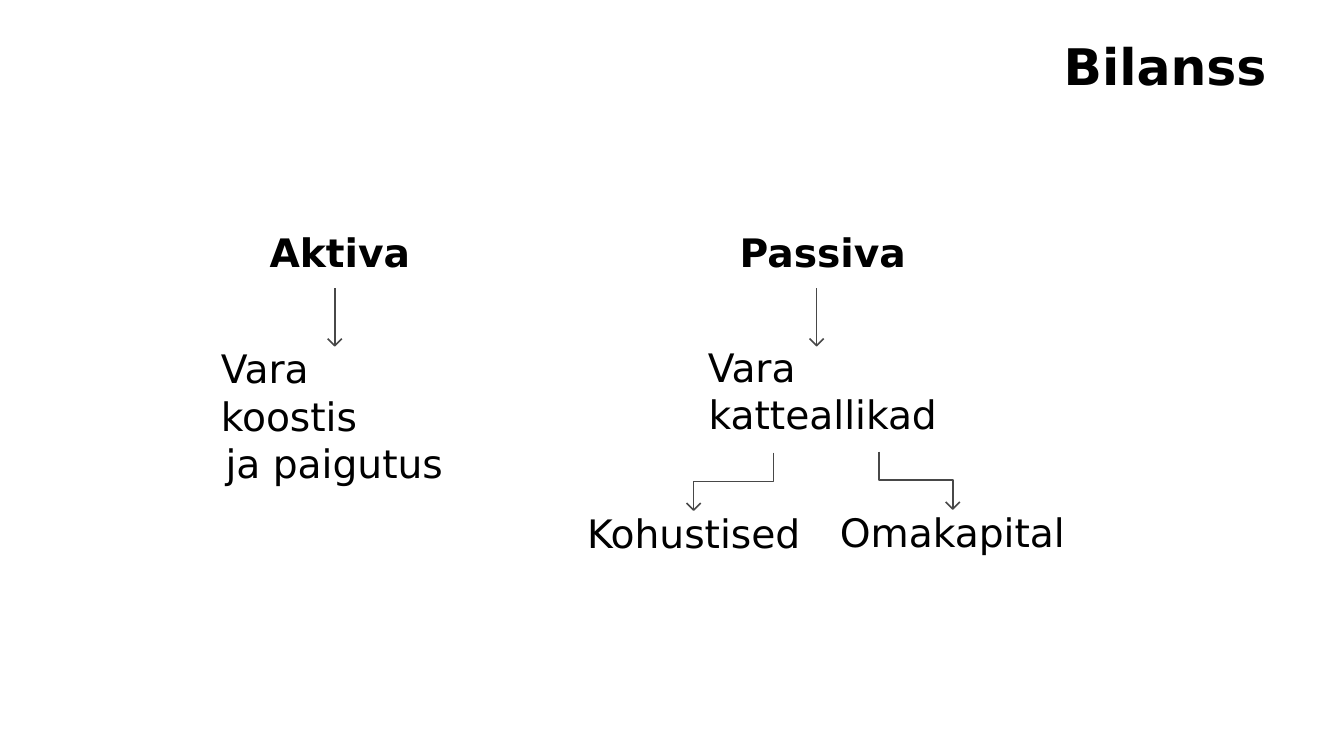
from pptx import Presentation
from pptx import util as u
from pptx.dml.color import RGBColor
from pptx.enum import shapes, text
from pptx.oxml.ns import qn
from lxml import etree

THEME = {
    "font": "DejaVu Sans",
    "ink": RGBColor(0, 0, 0),
    "line": RGBColor(0x48, 0x48, 0x48),
    "title": u.Pt(36),
    "body": u.Pt(28),
    "stroke": u.Pt(1.12),
}
LEFT, CENTER, RIGHT = text.PP_ALIGN.LEFT, text.PP_ALIGN.CENTER, text.PP_ALIGN.RIGHT

TITLE = ("Bilanss", (4.14, 0.3, 8.52, 0.69))
HEADINGS = [
    ("Aktiva", (2.53, 2.27, 1.68, 0.47)),
    ("Passiva", (6.81, 2.27, 2.7, 0.47)),
]
DETAILS = [
    ([("Vara koostis", LEFT), ("ja paigutus", CENTER)], (2.19, 3.42, 2.25, 1.41), True),
    ([("Vara", LEFT), ("katteallikad", CENTER)], (7.02, 3.41, 2.28, 0.94), True),
    ([("Kohustised", CENTER)], (5.8, 5.05, 2.16, 0.47), False),
    ([("Omakapital", CENTER)], (8.32, 5.04, 2.25, 0.47), False),
]
ARROWS = [
    ((3.32, 2.86), (3.32, 3.43)),
    ((8.1, 2.86), (8.1, 3.43)),
    ((7.67, 4.49), (6.88, 5.06)),
    ((8.72, 4.48), (9.45, 5.05)),
]
HEAD = 0.07


def add_text(page, lines, place, size, bold=False, wrap=True, inset=0, anchor=text.MSO_ANCHOR.TOP):
    box = page.shapes.add_textbox(*map(u.Inches, place))
    frame = box.text_frame
    frame.word_wrap = wrap
    frame.vertical_anchor = anchor
    frame.margin_left = frame.margin_right = u.Inches(inset)
    frame.margin_top = frame.margin_bottom = u.Inches(inset)
    for index, (words, align) in enumerate(lines):
        para = frame.add_paragraph() if index else frame.paragraphs[0]
        para.alignment = align
        span = para.add_run()
        span.text = words
        span.font.name = THEME["font"]
        span.font.size = size
        span.font.bold = bold
        span.font.color.rgb = THEME["ink"]


def set_line(shape):
    shape.line.color.rgb = THEME["line"]
    shape.line.width = THEME["stroke"]


def add_polyline(page, points):
    corners = [(u.Inches(x), u.Inches(y)) for x, y in points]
    builder = page.shapes.build_freeform(*corners[0])
    builder.add_line_segments(corners[1:], close=False)
    shape = builder.convert_to_shape()
    shape.shadow.inherit = False
    shape.fill.background()
    set_line(shape)


def add_arrow(page, start, end):
    (x1, y1), (x2, y2) = start, end
    if x1 == x2:
        shaft = page.shapes.add_connector(
            shapes.MSO_CONNECTOR.STRAIGHT, *map(u.Inches, (x1, y1, x2, y2)))
        etree.SubElement(shaft._element.spPr, qn("a:effectLst"))
        set_line(shaft)
    else:
        middle = (y1 + y2) / 2
        add_polyline(page, [start, (x1, middle), (x2, middle), end])
    add_polyline(page, [(x2 + HEAD, y2 - HEAD), end, (x2 - HEAD, y2 - HEAD)])


def main():
    deck = Presentation()
    deck.slide_width, deck.slide_height = u.Inches(13.33), u.Inches(7.5)
    page = deck.slides.add_slide(deck.slide_layouts[6])
    words, place = TITLE
    add_text(page, [(words, RIGHT)], place, THEME["title"], bold=True,
             inset=0.1, anchor=text.MSO_ANCHOR.MIDDLE)
    for words, place in HEADINGS:
        add_text(page, [(words, CENTER)], place, THEME["body"], bold=True)
    for lines, place, wrap in DETAILS:
        add_text(page, lines, place, THEME["body"], wrap=wrap)
    for start, end in ARROWS:
        add_arrow(page, start, end)
    deck.save("out.pptx")


if __name__ == "__main__":
    main()
